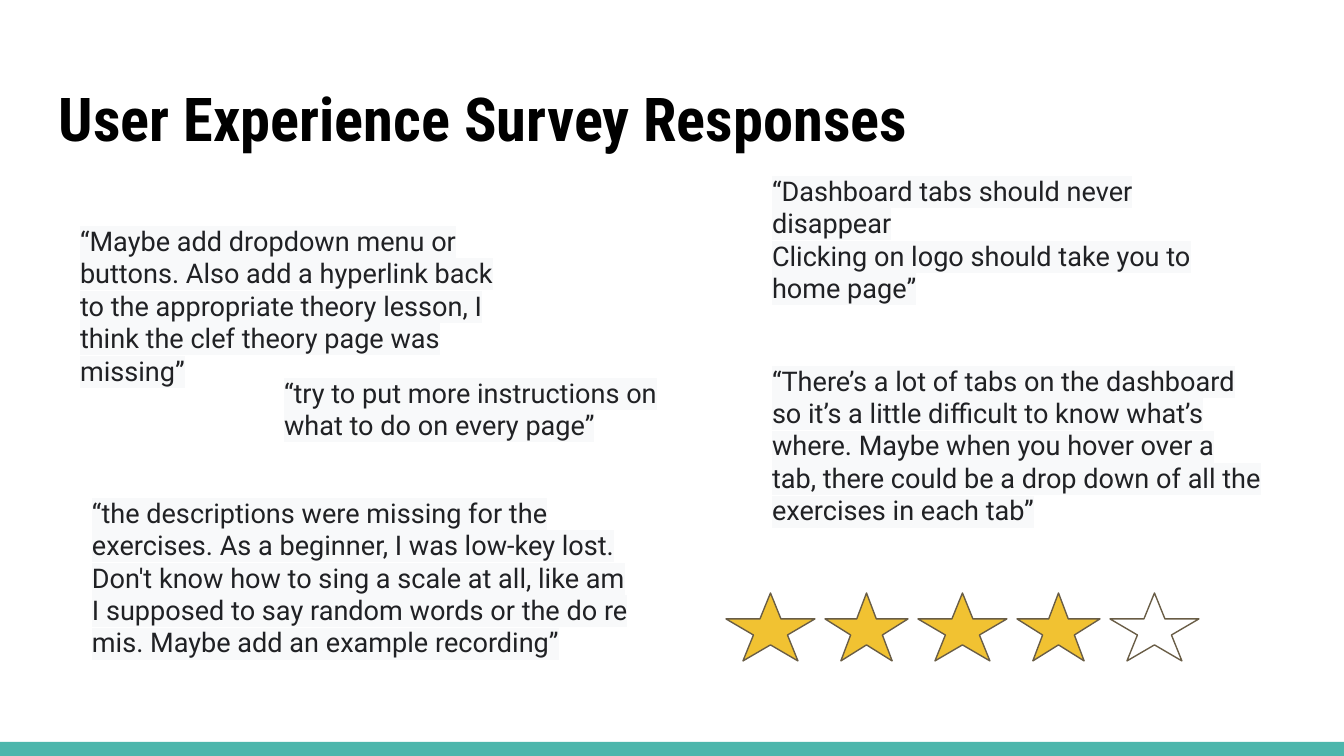
from dataclasses import dataclass

import pptx
import pptx.dml.color
import pptx.enum.shapes
import pptx.enum.text
import pptx.oxml
import pptx.oxml.ns
import pptx.util

EMU_PER_PX = 914400 / 134.4
SLIDE_W, SLIDE_H = 1344, 756
INSET = 13


@dataclass(frozen=True)
class Theme:
    title_font: str = "Roboto Condensed"
    body_font: str = "Roboto"
    title_size: float = 32.4
    body_size: float = 14.5
    title: str = "000000"
    body: str = "202124"
    highlight: str = "F8F9FA"
    bar: str = "4DB6AC"
    star_on: str = "F1C232"
    star_off: str = "FFFFFF"
    star_line: str = "695D46"


@dataclass(frozen=True)
class Quote:
    x: int
    y: int
    w: int
    h: int
    paragraphs: tuple[str, ...]


@dataclass(frozen=True)
class Rating:
    score: int
    total: int
    first_center: int
    pitch: int
    y: int
    h: int
    widths: tuple[int, ...]


THEME = Theme()

QUOTES = (
    Quote(67, 211, 442, 191, (
        "“Maybe add dropdown menu or buttons. Also add a hyperlink back to the "
        "appropriate theory lesson, I think the clef theory page was missing”",)),
    Quote(271, 363, 406, 93, (
        "“try to put more instructions on what to do on every page”",)),
    Quote(79, 483, 570, 191, (
        "“the descriptions were missing for the exercises. As a beginner, I was "
        "low-key lost. Don't know how to sing a scale at all, like am I supposed to "
        "say random words or the do re mis. Maybe add an example recording”",)),
    Quote(759, 161, 488, 159, (
        "“Dashboard tabs should never disappear",
        "Clicking on logo should take you to home page”")),
    Quote(759, 351, 517, 191, (
        "“There’s a lot of tabs on the dashboard so it’s a little difficult to know "
        "what’s where. Maybe when you hover over a tab, there could be a drop down "
        "of all the exercises in each tab”",)),
)

RATING = Rating(score=4, total=5, first_center=770, pitch=96, y=593, h=68,
                widths=(89, 83))


def px(n: int) -> pptx.util.Emu:
    return pptx.util.Emu(round(n * EMU_PER_PX))


def rgb(color: str) -> pptx.dml.color.RGBColor:
    return pptx.dml.color.RGBColor.from_string(color)


def write(tf, paragraphs: tuple[str, ...], *, font: str, size: float, color: str,
          bold: bool = False, highlight: str | None = None,
          anchor=pptx.enum.text.MSO_ANCHOR.TOP,
          auto_size=pptx.enum.text.MSO_AUTO_SIZE.NONE) -> None:
    tf.word_wrap = True
    tf.auto_size = auto_size
    tf.vertical_anchor = anchor
    tf.margin_left = tf.margin_right = tf.margin_top = tf.margin_bottom = px(INSET)
    for i, text in enumerate(paragraphs):
        p = tf.paragraphs[0] if i == 0 else tf.add_paragraph()
        p.alignment = pptx.enum.text.PP_ALIGN.LEFT
        r = p.add_run()
        r.text = text
        r.font.name = font
        r.font.size = pptx.util.Pt(size)
        r.font.bold = bold
        r.font.color.rgb = rgb(color)
        if highlight:
            # Highlight must directly follow the text fill
            fill = r._r.get_or_add_rPr().find(pptx.oxml.ns.qn("a:solidFill"))
            fill.addnext(pptx.oxml.parse_xml(
                f'<a:highlight {pptx.oxml.ns.nsdecls("a")}>'
                f'<a:srgbClr val="{highlight}"/></a:highlight>'))


def add_shape(s, kind, x: int, y: int, w: int, h: int, fill: str,
              line: str | None = None) -> None:
    sp = s.shapes.add_shape(kind, px(x), px(y), px(w), px(h))
    sp.shadow.inherit = False
    sp.fill.solid()
    sp.fill.fore_color.rgb = rgb(fill)
    if line:
        sp.line.color.rgb = rgb(line)
        sp.line.width = pptx.util.Pt(0.75)
    else:
        sp.line.fill.background()


def add_title(s, text: str) -> None:
    sp = s.shapes.title
    sp.left, sp.top, sp.width, sp.height = px(46), px(66), px(1253), px(103)
    write(sp.text_frame, (text,), font=THEME.title_font, size=THEME.title_size,
          color=THEME.title, bold=True, anchor=pptx.enum.text.MSO_ANCHOR.MIDDLE)


def add_quote(s, q: Quote) -> None:
    sp = s.shapes.add_textbox(px(q.x), px(q.y), px(q.w), px(q.h))
    write(sp.text_frame, q.paragraphs, font=THEME.body_font, size=THEME.body_size,
          color=THEME.body, highlight=THEME.highlight,
          auto_size=pptx.enum.text.MSO_AUTO_SIZE.SHAPE_TO_FIT_TEXT)


def add_rating(s, rating: Rating) -> None:
    for i in range(rating.total):
        w = rating.widths[i % len(rating.widths)]
        x = rating.first_center + i * rating.pitch - w // 2
        fill = THEME.star_on if i < rating.score else THEME.star_off
        add_shape(s, pptx.enum.shapes.MSO_SHAPE.STAR_5_POINT, x, rating.y, w,
                  rating.h, fill, THEME.star_line)


def main() -> None:
    prs = pptx.Presentation()
    prs.slide_width, prs.slide_height = px(SLIDE_W), px(SLIDE_H)
    s = prs.slides.add_slide(prs.slide_layouts[5])

    # Bottom bar
    add_shape(s, pptx.enum.shapes.MSO_SHAPE.RECTANGLE, 0, 742, SLIDE_W, 14, THEME.bar)

    # Title
    add_title(s, "User Experience Survey Responses")

    # Survey quotes
    for quote in QUOTES:
        add_quote(s, quote)

    # Star rating
    add_rating(s, RATING)

    prs.save("out.pptx")


if __name__ == "__main__":
    main()
